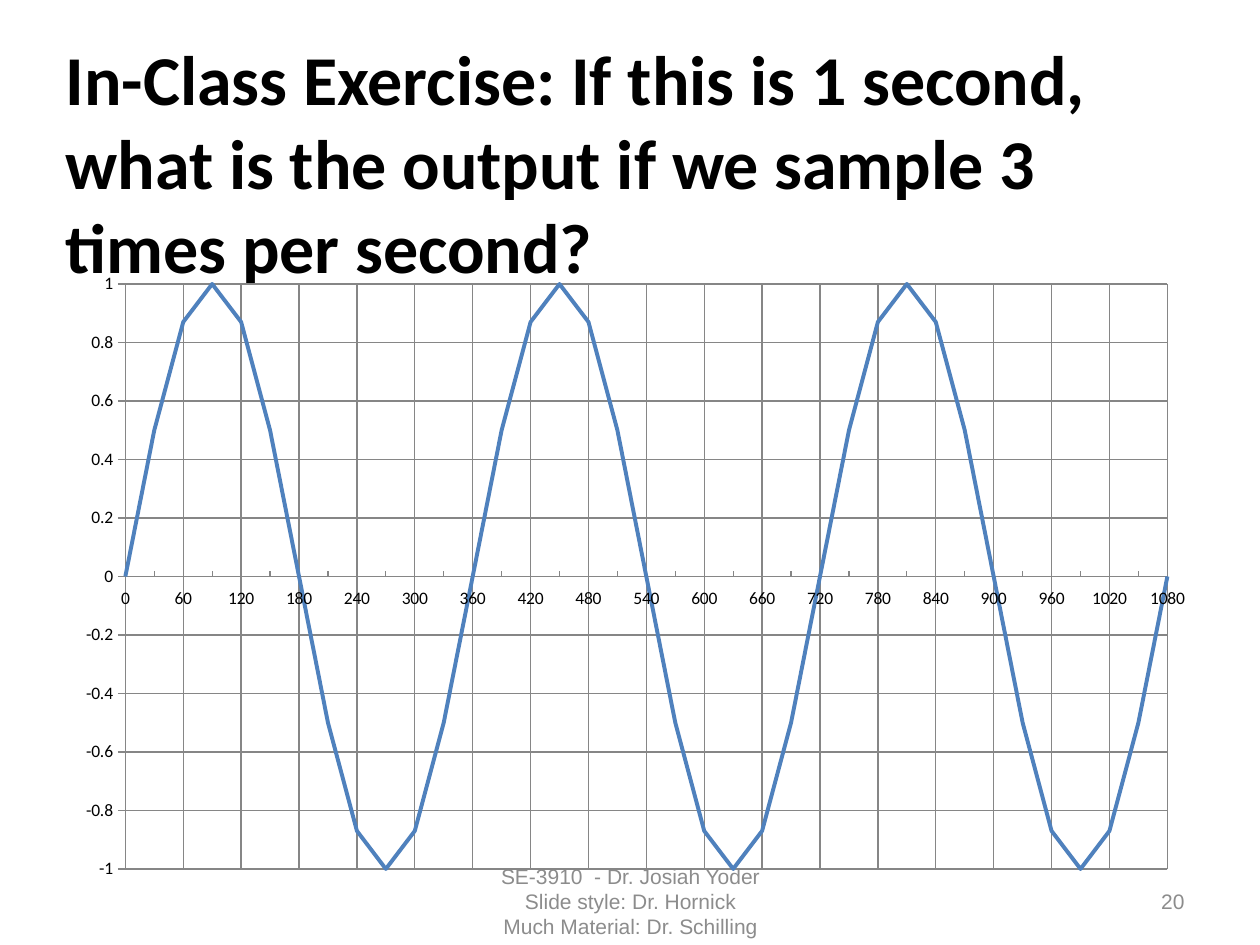
import math
from dataclasses import dataclass

from lxml import etree
from pptx import Presentation
from pptx.chart.data import XyChartData
from pptx.dml.color import RGBColor
from pptx.enum.chart import XL_CHART_TYPE, XL_TICK_MARK
from pptx.enum.text import MSO_ANCHOR, MSO_AUTO_SIZE, PP_ALIGN
from pptx.oxml.ns import qn
from pptx.util import Inches, Pt

SMOOTH_SCATTER = XL_CHART_TYPE.XY_SCATTER_SMOOTH_NO_MARKERS
TICK_IN, TICK_OUT = XL_TICK_MARK.INSIDE, XL_TICK_MARK.OUTSIDE
BOTTOM, MIDDLE = MSO_ANCHOR.BOTTOM, MSO_ANCHOR.MIDDLE
LEFT, CENTER, RIGHT = PP_ALIGN.LEFT, PP_ALIGN.CENTER, PP_ALIGN.RIGHT


@dataclass(frozen=True)
class Theme:
    text = RGBColor(0x00, 0x00, 0x00)
    muted = RGBColor(0x8C, 0x8C, 0x8C)
    grid = RGBColor(0x86, 0x86, 0x86)
    curve = RGBColor(0x4F, 0x81, 0xBD)
    heading_font = "Calibri"
    footer_font = "Arial"
    title_size = Pt(40)
    footer_size = Pt(12)
    chart_size = Pt(10)
    grid_width = Pt(0.75)
    curve_width = Pt(2.25)


THEME = Theme()


def style_font(font, name, size, color, bold=False):
    font.name, font.size, font.bold = name, size, bold
    font.color.rgb = color


def add_title(s, box, text):
    sp = s.shapes.title
    sp.left, sp.top, sp.width, sp.height = map(Inches, box)
    tf = sp.text_frame
    tf.word_wrap = True
    tf.auto_size = MSO_AUTO_SIZE.NONE
    tf.vertical_anchor = BOTTOM
    tf.text = text
    p = tf.paragraphs[0]
    p.alignment = LEFT
    style_font(p.font, THEME.heading_font, THEME.title_size, THEME.text, True)


def add_footer(s, box, lines, align):
    tf = s.shapes.add_textbox(*map(Inches, box)).text_frame
    tf.word_wrap = True
    tf.vertical_anchor = MIDDLE
    tf.text = "\n".join(lines)
    for p in tf.paragraphs:
        p.alignment = align
        style_font(p.font, THEME.footer_font, THEME.footer_size, THEME.muted)


def set_plot_layout(chart, x, y, w, h):
    """Fix the inner plot area as fractions of the chart."""
    area = chart._chartSpace.chart.plotArea
    for old in area.findall(qn("c:layout")):
        area.remove(old)
    layout = etree.Element(qn("c:layout"))
    manual = etree.SubElement(layout, qn("c:manualLayout"))
    settings = [("layoutTarget", "inner"), ("xMode", "edge"), ("yMode", "edge"),
                ("x", x), ("y", y), ("w", w), ("h", h)]
    for tag, value in settings:
        etree.SubElement(manual, qn(f"c:{tag}")).set("val", str(value))
    area.insert(0, layout)


def style_axis(axis, low, high, step):
    axis.minimum_scale, axis.maximum_scale, axis.major_unit = low, high, step
    axis.major_tick_mark = TICK_OUT
    axis.has_major_gridlines = True
    for line in (axis.format.line, axis.major_gridlines.format.line):
        line.color.rgb = THEME.grid
        line.width = THEME.grid_width
    axis.tick_labels.number_format = "General"
    axis.tick_labels.number_format_is_linked = False


def add_sine_chart(s, box):
    # Three full periods, one point every 30 degrees
    data = XyChartData()
    series = data.add_series("Series 1")
    for degrees in range(0, 1081, 30):
        series.add_data_point(degrees, round(math.sin(math.radians(degrees)), 2))

    chart = s.shapes.add_chart(SMOOTH_SCATTER, *map(Inches, box), data).chart
    chart.has_legend = False
    chart.has_title = False
    style_font(chart.font, THEME.heading_font, THEME.chart_size, THEME.text)
    set_plot_layout(chart, 0.055, 0.017, 0.919, 0.938)

    # Axes
    style_axis(chart.category_axis, 0, 1080, 60)
    chart.category_axis.minor_unit = 30
    chart.category_axis.minor_tick_mark = TICK_IN
    style_axis(chart.value_axis, -1, 1, 0.2)
    chart.value_axis.minor_tick_mark = XL_TICK_MARK.NONE

    # Curve
    chart.plots[0].vary_by_categories = False
    curve = chart.plots[0].series[0]
    curve.smooth = True
    curve.format.line.color.rgb = THEME.curve
    curve.format.line.width = THEME.curve_width


def main():
    prs = Presentation()
    prs.slide_width, prs.slide_height = Inches(10), Inches(7.5)
    s = prs.slides.add_slide(prs.slide_layouts[5])

    add_title(s, (0.42, 1.08, 9, 1.25),
              "In-Class Exercise: If this is 1 second,\v"
              "what is the output if we sample 3 times per second?")
    add_footer(s, (3.42, 6.95, 3.17, 0.4),
               ["SE-3910  - Dr. Josiah Yoder", "Slide style: Dr. Hornick",
                "Much Material: Dr. Schilling"], CENTER)
    add_footer(s, (7.17, 6.95, 2.33, 0.4), ["20"], RIGHT)
    add_sine_chart(s, (0.5, 2.17, 9, 4.95))

    prs.save("out.pptx")


if __name__ == "__main__":
    main()
